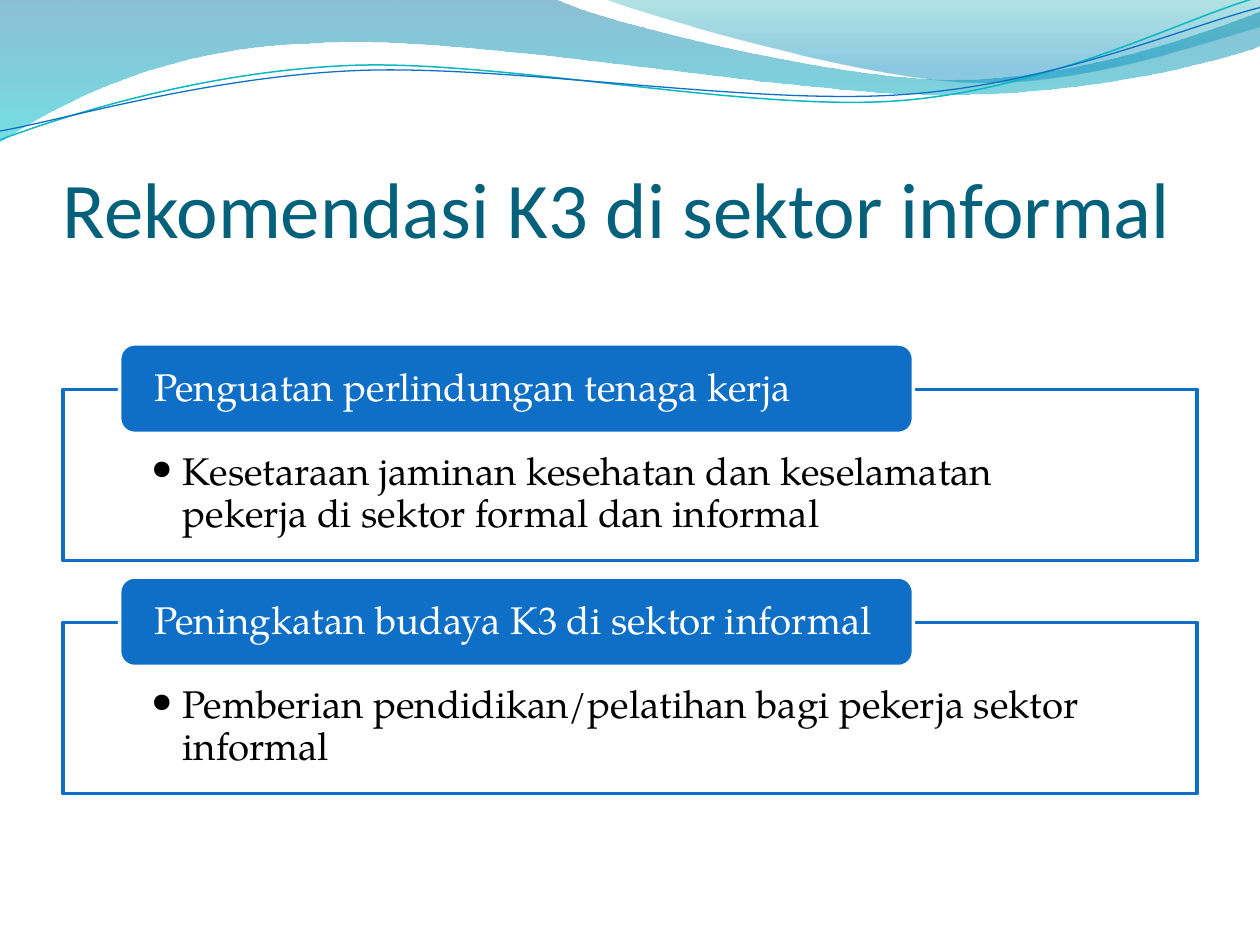
from math import cos, radians, sin

from lxml import etree
from pptx import Presentation
from pptx.dml.color import RGBColor
from pptx.enum.shapes import MSO_SHAPE
from pptx.enum.text import MSO_ANCHOR, PP_ALIGN
from pptx.oxml.ns import qn
from pptx.util import Inches, Pt

BLUE = RGBColor(0x0F, 0x6F, 0xC6)
TEAL = RGBColor(0x0A, 0xB8, 0xBF)
TITLE = RGBColor(0x04, 0x61, 0x7B)
WHITE = RGBColor(0xFF, 0xFF, 0xFF)
BLACK = RGBColor(0, 0, 0)
WAVE_TOP, WAVE_END = RGBColor(0, 0x74, 0xA1), RGBColor(0, 0xC6, 0xCF)
CREST_TOP, CREST_END = RGBColor(0, 0xA1, 0xA9), RGBColor(0, 0x8B, 0xBF)
SERIF = "TeX Gyre Pagella"
TILT = 2.7  # degrees the thin header lines are turned anticlockwise
TILT_X, TILT_Y = 4.99, 0.57

prs = Presentation()
prs.slide_width, prs.slide_height = Inches(10), Inches(7.5)
s = prs.slides.add_slide(prs.slide_layouts[6])


def add_curve(start, segments, close):
    """Draw a path of straight (2 numbers) and cubic Bezier (6 numbers) segments."""
    fb = s.shapes.build_freeform(Inches(start[0]), Inches(start[1]), scale=1.0)
    fb.add_line_segments([(Inches(seg[-2]), Inches(seg[-1])) for seg in segments], close=close)
    sp = fb.convert_to_shape()
    sp.shadow.inherit = False
    for ln, seg in zip(list(sp._element.iter(qn("a:lnTo"))), segments):
        if len(seg) == 6:
            ln.tag = qn("a:cubicBezTo")
            for i in (2, 0):
                pt = etree.Element(qn("a:pt"))
                pt.set("x", str(Inches(seg[i]) - sp.left))
                pt.set("y", str(Inches(seg[i + 1]) - sp.top))
                ln.insert(0, pt)
    return sp


# Header waves with translucent gradients
waves = [
    ((0, 0), [(4.4, -0.01), (4.76, 0.17, 6.64, 0.63, 7.58, 0.63),
              (8.53, 0.63, 9.58, 0.26, 10, 0.09), (10.01, 0.36),
              (9.83, 0.44, 8.7, 0.76, 7.46, 0.75),
              (6.22, 0.75, 3.82, 0.28, 2.57, 0.34),
              (1.29, 0.36, 0.46, 0.83, -0.01, 1.13), (0, 0)],
     [(0, WAVE_TOP, 45), (1, WAVE_END, 55)]),
    ((4.79, -0.01), [(5.09, 0.11, 6.82, 0.62, 7.69, 0.65),
                     (8.56, 0.69, 9.61, 0.32, 10, 0.21), (10, 0), (4.79, -0.01)],
     [(0, CREST_TOP, 30), (0.8, CREST_END, 45)]),
]
for start, segments, stops in waves:
    sp = add_curve(start, segments, True)
    sp.line.fill.background()
    sp.fill.gradient()
    sp.fill.gradient_angle = 270
    gs_list = sp._element.spPr.findall(".//" + qn("a:gs"))
    for stop, gs, (pos, color, alpha) in zip(sp.fill.gradient_stops, gs_list, stops):
        stop.position = pos
        stop.color.rgb = color
        etree.SubElement(gs[0], qn("a:alpha")).set("val", str(alpha * 1000))

# Thin header lines: laid out level, then tilted by the shape rotation
lines = [
    ([(0, 1.11), (0.48, 0.93), (1.58, 0.57), (2.77, 0.52), (3.95, 0.47), (5.93, 0.89),
      (7.13, 0.8), (8.33, 0.71), (9.38, 0.15), (9.98, -0.02)], TEAL, 0.85),
    ([(0, 1.04), (0.47, 0.96), (1.64, 0.61), (2.83, 0.56), (4.03, 0.51), (5.97, 0.84),
      (7.17, 0.75), (8.36, 0.67), (9.41, 0.21), (10, 0.06)], BLUE, 0.75),
]
c, d = cos(radians(TILT)), sin(radians(TILT))
for pts, color, width in lines:
    level = [(TILT_X + (x - TILT_X) * c - (y - TILT_Y) * d,
              TILT_Y + (x - TILT_X) * d + (y - TILT_Y) * c) for x, y in pts]
    segments = [level[i] + level[i + 1] + level[i + 2] for i in range(1, len(level), 3)]
    sp = add_curve(level[0], segments, False)
    sp.rotation = 360 - TILT
    sp.fill.background()
    sp.line.color.rgb = color
    sp.line.width = Pt(width)


def set_text(sp, text, font, size, color, anchor, insets):
    tf = sp.text_frame
    tf.word_wrap = True
    tf.vertical_anchor = anchor
    tf.margin_left, tf.margin_top, tf.margin_right, tf.margin_bottom = map(Inches, insets)
    p = tf.paragraphs[0]
    p.alignment = PP_ALIGN.LEFT
    r = p.add_run()
    r.text = text
    r.font.name, r.font.size, r.font.color.rgb = font, Pt(size), color
    return p


# Title
sp = s.shapes.add_textbox(Inches(0.5), Inches(0.77), Inches(9), Inches(1.25))
set_text(sp, "Rekomendasi K3 di sektor informal", "Calibri", 45, TITLE,
         MSO_ANCHOR.BOTTOM, (0, 0.05, 0, 0))

# Recommendations: outlined box with a heading tab over its top edge
recommendations = [
    ("Penguatan perlindungan tenaga kerja",
     "Kesetaraan jaminan kesehatan dan keselamatan pekerja di sektor formal dan informal"),
    ("Peningkatan budaya K3 di sektor informal",
     "Pemberian pendidikan/pelatihan bagi pekerja sektor informal"),
]
for i, (heading, detail) in enumerate(recommendations):
    top = 3.09 + 1.85 * i
    box = s.shapes.add_shape(MSO_SHAPE.RECTANGLE, Inches(0.5), Inches(top),
                             Inches(9), Inches(1.36))
    tab = s.shapes.add_shape(MSO_SHAPE.ROUNDED_RECTANGLE, Inches(0.95), Inches(top - 0.36),
                             Inches(6.3), Inches(0.71))
    for sp, fill, line in ((box, WHITE, BLUE), (tab, BLUE, WHITE)):
        sp.shadow.inherit = False
        sp.fill.solid()
        sp.fill.fore_color.rgb = fill
        sp.line.color.rgb = line
        sp.line.width = Pt(2)
    clr = box._element.spPr.find(qn("a:solidFill"))[0]
    etree.SubElement(clr, qn("a:alpha")).set("val", "90000")

    p = set_text(box, detail, SERIF, 22, BLACK, MSO_ANCHOR.TOP, (0.7, 0.5, 0.7, 0.17))
    p.line_spacing = 0.9
    pPr = p._p.get_or_add_pPr()
    pPr.set("marL", str(Inches(0.25)))
    pPr.set("indent", str(-Inches(0.25)))
    etree.SubElement(pPr, qn("a:buFont")).set("typeface", SERIF)
    etree.SubElement(pPr, qn("a:buChar")).set("char", "•")

    # The rounded corners already inset the heading by 0.03 in
    p = set_text(tab, heading, SERIF, 22, WHITE, MSO_ANCHOR.MIDDLE, (0.24, 0, 0.24, 0))
    p.line_spacing = 0.9

prs.save("out.pptx")
